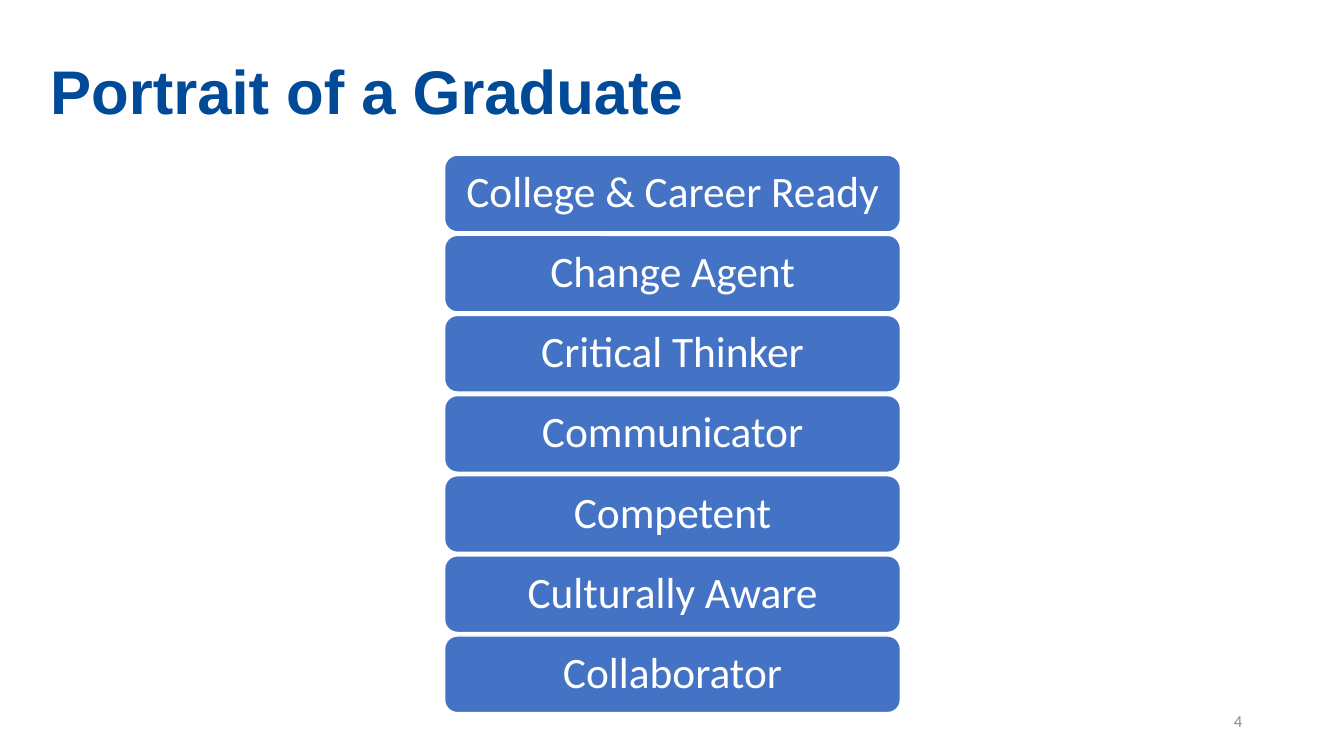
from dataclasses import dataclass

from pptx import Presentation
from pptx.dml.color import RGBColor
from pptx.enum.shapes import MSO_SHAPE
from pptx.enum.text import MSO_ANCHOR, PP_ALIGN
from pptx.util import Inches, Pt

ROUNDED = MSO_SHAPE.ROUNDED_RECTANGLE
MIDDLE = MSO_ANCHOR.MIDDLE
LEFT, CENTER, RIGHT = PP_ALIGN.LEFT, PP_ALIGN.CENTER, PP_ALIGN.RIGHT


@dataclass(frozen=True)
class Theme:
    heading_font: str = "Arial"
    body_font: str = "Calibri"
    navy: RGBColor = RGBColor(0x00, 0x4A, 0x98)
    blue: RGBColor = RGBColor(0x44, 0x72, 0xC4)
    white: RGBColor = RGBColor(0xFF, 0xFF, 0xFF)
    gray: RGBColor = RGBColor(0x8C, 0x8C, 0x8C)
    title_size: int = 44
    trait_size: int = 31
    number_size: int = 12


THEME = Theme()
SLIDE_WIDTH, SLIDE_HEIGHT = 13.33, 7.5

# Regions: left, top, width, height in inches
TITLE_BOX = (0.4, 0.33, 8.83, 1.22)
TRAITS_BOX = (4.41, 1.54, 4.52, 5.53)
NUMBER_BOX = (9.42, 6.95, 3, 0.4)

TRAITS = [
    "College & Career Ready",
    "Change Agent",
    "Critical Thinker",
    "Communicator",
    "Competent",
    "Culturally Aware",
    "Collaborator",
]
TRAIT_HEIGHT = 0.76


def write_line(frame, text, font, size, color, align, bold=False):
    frame.word_wrap = True
    frame.vertical_anchor = MIDDLE
    line = frame.paragraphs[0]
    line.text = text
    line.alignment = align
    line.font.name = font
    line.font.size = Pt(size)
    line.font.color.rgb = color
    line.font.bold = bold
    return line


def add_title(slide, box, text):
    title = slide.shapes.add_textbox(*map(Inches, box))
    line = write_line(title.text_frame, text, THEME.heading_font,
                      THEME.title_size, THEME.navy, LEFT, bold=True)
    line.line_spacing = 0.9


def add_trait_stack(slide, box, traits):
    left, top, width, height = box
    pitch = (height - TRAIT_HEIGHT) / (len(traits) - 1)
    for row, trait in enumerate(traits):
        bar = slide.shapes.add_shape(
            ROUNDED, Inches(left), Inches(top + row * pitch),
            Inches(width), Inches(TRAIT_HEIGHT))
        bar.shadow.inherit = False
        bar.fill.solid()
        bar.fill.fore_color.rgb = THEME.blue
        bar.line.color.rgb = THEME.white
        bar.line.width = Pt(1)
        frame = bar.text_frame
        frame.margin_left = frame.margin_right = Inches(0.13)
        frame.margin_top = frame.margin_bottom = Inches(0.06)
        line = write_line(frame, trait, THEME.body_font,
                          THEME.trait_size, THEME.white, CENTER)
        line.line_spacing = 0.9


def add_slide_number(slide, box, number):
    label = slide.shapes.add_textbox(*map(Inches, box))
    write_line(label.text_frame, number, THEME.body_font,
               THEME.number_size, THEME.gray, RIGHT)


def main():
    deck = Presentation()
    deck.slide_width = Inches(SLIDE_WIDTH)
    deck.slide_height = Inches(SLIDE_HEIGHT)
    slide = deck.slides.add_slide(deck.slide_layouts[6])
    add_title(slide, TITLE_BOX, "Portrait of a Graduate")
    add_slide_number(slide, NUMBER_BOX, "4")
    add_trait_stack(slide, TRAITS_BOX, TRAITS)
    deck.save("out.pptx")


if __name__ == "__main__":
    main()
